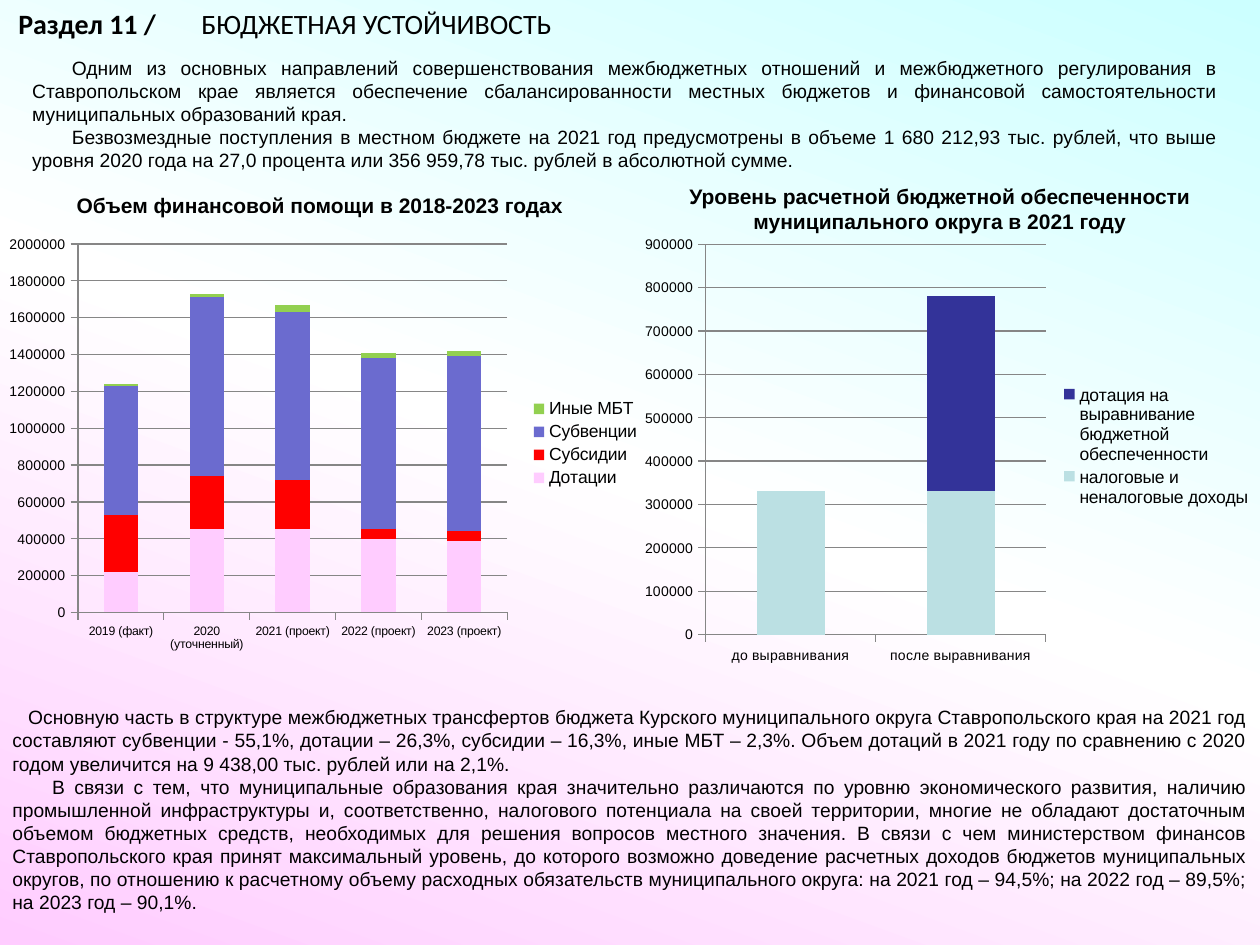
from copy import deepcopy

from lxml.etree import SubElement
from pptx import Presentation
from pptx.chart.data import CategoryChartData
from pptx.dml.color import RGBColor
from pptx.enum.chart import XL_CHART_TYPE, XL_LEGEND_POSITION, XL_TICK_MARK
from pptx.enum.text import PP_ALIGN
from pptx.oxml import parse_xml
from pptx.oxml.ns import nsdecls, qn
from pptx.util import Cm, Pt

COLORS = {
    "text": "000000",
    "axis": "868686",
    "cyan": "CCFFFF",
    "white": "FFFFFF",
    "pink": "FFCCFF",
    "red": "FF0000",
    "violet": "6B6BCF",
    "green": "92D050",
    "pale teal": "BBE0E3",
    "navy": "333399",
}
COLORS = {name: RGBColor.from_string(value) for name, value in COLORS.items()}


def add_text(position, paragraphs, size, font="Arial", alignment=PP_ALIGN.LEFT):
    """Each paragraph is (first-line indent in cm, [(text, bold), ...])."""
    shape = slide.shapes.add_textbox(*(Cm(length) for length in position))
    frame = shape.text_frame
    frame.word_wrap = True
    for index, (indent, runs) in enumerate(paragraphs):
        paragraph = frame.paragraphs[0] if index == 0 else frame.add_paragraph()
        paragraph.alignment = alignment
        properties = paragraph._p.get_or_add_pPr()
        properties.set("marL", "0")
        properties.set("indent", str(Cm(indent)))
        for text, bold in runs:
            run = paragraph.add_run()
            run.text = text
            run.font.name = font
            run.font.size = Pt(size)
            run.font.bold = bold
            run.font.color.rgb = COLORS["text"]
    return shape


def set_layout(element, index, box, inner=False):
    """Place a plot area or legend by fractions of the chart: x, y, w, h."""
    for old_layout in element.findall(qn("c:layout")):
        element.remove(old_layout)
    target = '<c:layoutTarget val="inner"/>' if inner else ""
    values = "".join(f'<c:{key} val="{value}"/>' for key, value in zip("xywh", box))
    element.insert(index, parse_xml(
        f'<c:layout {nsdecls("c")}><c:manualLayout>{target}'
        f'<c:xMode val="edge"/><c:yMode val="edge"/>{values}'
        f'</c:manualLayout></c:layout>'))


presentation = Presentation()
presentation.slide_width = Cm(25.4)
presentation.slide_height = Cm(19.05)
slide = presentation.slides.add_slide(presentation.slide_layouts[6])

# Background: three-stop gradient
background = slide.background.fill
background.gradient()
background.gradient_angle = 250
stop_list = slide.element.xpath(".//a:gsLst")[0]
stop_list.insert(1, deepcopy(stop_list[0]))
for stop, position, color in zip(background.gradient_stops, (0, 0.5, 1), ("cyan", "white", "pink")):
    stop.position = position
    stop.color.rgb = COLORS[color]

# Heading: section number, then the title at a tab stop
heading = add_text((0, 0, 25.4, 0.94),
                   [(0.12, [("Раздел 11 /\t", True), ("БЮДЖЕТНАЯ УСТОЙЧИВОСТЬ", False)])],
                   16, "Calibri")
heading_properties = heading.text_frame.paragraphs[0]._p.get_or_add_pPr()
tab_list = SubElement(heading_properties, qn("a:tabLst"))
SubElement(tab_list, qn("a:tab"), pos=str(Cm(8.88)), algn="l")

add_text((0.4, 1, 24.4, 2.62), [
    (0.8, [("Одним из основных направлений совершенствования межбюджетных отношений и "
            "межбюджетного регулирования в Ставропольском крае является обеспечение "
            "сбалансированности местных бюджетов и финансовой самостоятельности "
            "муниципальных образований края.", False)]),
    (0.8, [("Безвозмездные поступления в местном бюджете на 2021 год предусмотрены в объеме "
            "1 680 212,93 тыс. рублей, что выше уровня 2020 года на 27,0 процента или "
            "356 959,78 тыс. рублей в абсолютной сумме.", False)]),
], 11, alignment=PP_ALIGN.JUSTIFY)

add_text((0, 14.1, 25.4, 4.95), [
    (0.32, [("Основную часть в структуре межбюджетных трансфертов бюджета Курского "
             "муниципального округа Ставропольского края на 2021 год составляют субвенции - "
             "55,1%, дотации – 26,3%, субсидии – 16,3%, иные МБТ – 2,3%. Объем дотаций в 2021 "
             "году по сравнению с 2020 годом увеличится на 9 438,00 тыс. рублей или на 2,1%.",
             False)]),
    (0.8, [("В связи с тем, что муниципальные образования края значительно различаются по "
            "уровню экономического развития, наличию промышленной инфраструктуры и, "
            "соответственно, налогового потенциала на своей территории, многие не обладают "
            "достаточным объемом бюджетных средств, необходимых для решения вопросов местного "
            "значения. В связи с чем министерством финансов Ставропольского края принят "
            "максимальный уровень, до которого возможно доведение расчетных доходов бюджетов "
            "муниципальных округов, по отношению к расчетному объему расходных обязательств "
            "муниципального округа: на 2021 год – 94,5%; на 2022 год – 89,5%; "
            "на 2023 год – 90,1%.", False)]),
], 11, alignment=PP_ALIGN.JUSTIFY)

for position, title in (
    ((0, 3.76, 12.9, 0.76), "Объем финансовой помощи в 2018-2023 годах"),
    ((12.5, 3.58, 12.9, 1.27),
     "Уровень расчетной бюджетной обеспеченности муниципального округа в 2021 году"),
):
    add_text(position, [(0, [(title, True)])], 12, alignment=PP_ALIGN.CENTER)

# Stacked column charts
charts = [
    {
        "position": (0, 4.57, 13.11, 8.74),
        "categories": ["2019 (факт)", "2020 (уточненный)", "2021 (проект)",
                       "2022 (проект)", "2023 (проект)"],
        "series": [
            ("Дотации", (220000, 450000, 450000, 400000, 390000), "pink"),
            ("Субсидии", (310000, 290000, 270000, 50000, 50000), "red"),
            ("Субвенции", (700000, 970000, 910000, 930000, 950000), "violet"),
            ("Иные МБТ", (10000, 20000, 40000, 30000, 30000), "green"),
        ],
        "maximum": 2000000, "step": 200000, "category size": 7,
        "plot": (0.12, 0.04, 0.66, 0.85), "legend": (0.81, 0.39, 0.18, 0.22),
    },
    {
        "position": (12.7, 4.57, 12.7, 8.94),
        "categories": ["до выравнивания", "после выравнивания"],
        "series": [
            ("налоговые и неналоговые доходы", (330000, 330000), "pale teal"),
            ("дотация на выравнивание бюджетной обеспеченности", (None, 450000), "navy"),
        ],
        "maximum": 900000, "step": 100000, "category size": 8,
        "plot": (0.12, 0.04, 0.54, 0.88), "legend": (0.68, 0.35, 0.31, 0.29),
    },
]
for settings in charts:
    data = CategoryChartData(number_format="0")
    data.categories = settings["categories"]
    for name, values, color in settings["series"]:
        data.add_series(name, values)
    chart = slide.shapes.add_chart(
        XL_CHART_TYPE.COLUMN_STACKED,
        *(Cm(length) for length in settings["position"]), data).chart
    chart.has_title = False
    chart.font.name = "Arial"
    chart.font.size = Pt(8)
    chart.font.color.rgb = COLORS["text"]

    plot = chart.plots[0]
    plot.gap_width = 150
    plot.overlap = 100
    plot.vary_by_categories = False
    for series, (name, values, color) in zip(plot.series, settings["series"]):
        series.format.fill.solid()
        series.format.fill.fore_color.rgb = COLORS[color]

    value_axis = chart.value_axis
    value_axis.minimum_scale = 0
    value_axis.maximum_scale = settings["maximum"]
    value_axis.major_unit = settings["step"]
    value_axis.has_major_gridlines = True
    chart.category_axis.tick_labels.font.size = Pt(settings["category size"])
    for axis in (chart.category_axis, value_axis):
        axis.major_tick_mark = XL_TICK_MARK.OUTSIDE
    for line_format in (chart.category_axis.format, value_axis.format,
                        value_axis.major_gridlines.format):
        line_format.line.color.rgb = COLORS["axis"]
        line_format.line.width = Pt(0.75)

    chart.has_legend = True
    chart.legend.position = XL_LEGEND_POSITION.RIGHT
    chart.legend.include_in_layout = False
    chart.legend.font.size = Pt(10)
    set_layout(chart.element.xpath(".//c:plotArea")[0], 0, settings["plot"], inner=True)
    set_layout(chart.element.xpath(".//c:legend")[0], 1, settings["legend"])

presentation.save("out.pptx")
